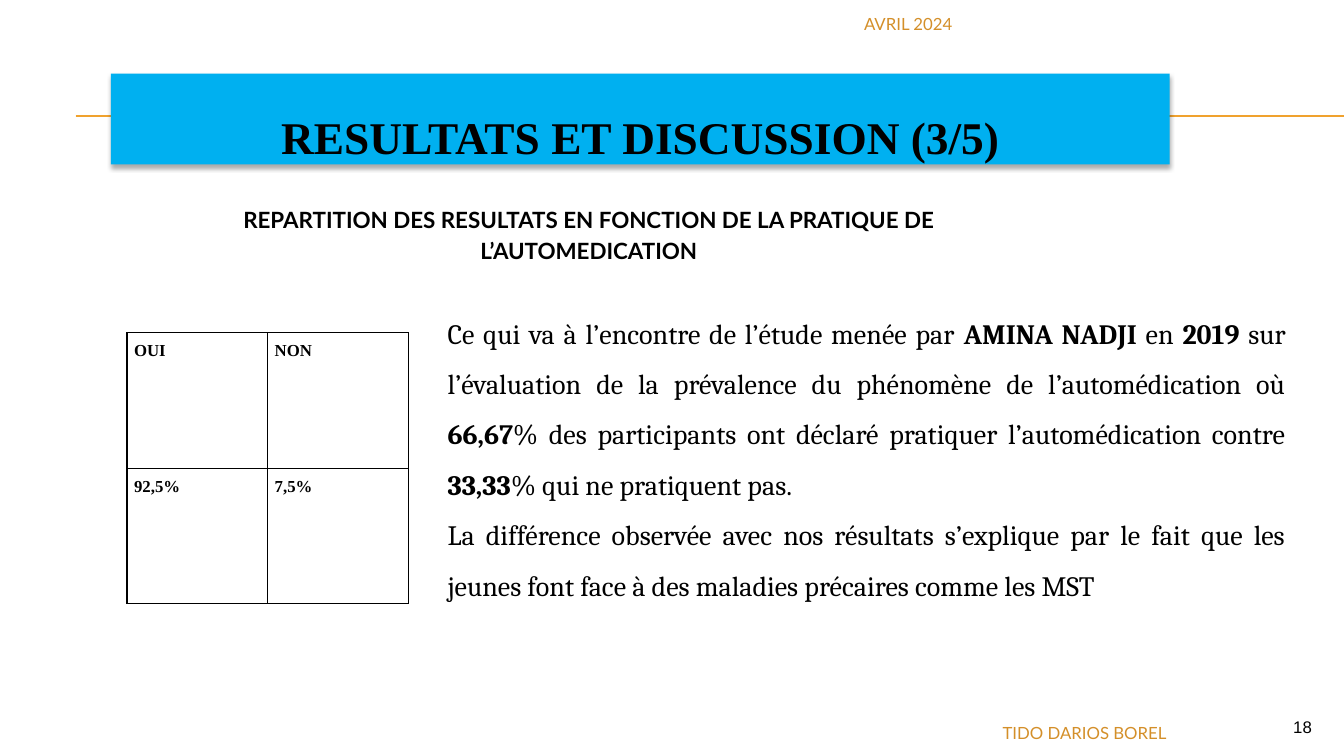
from dataclasses import dataclass

from lxml.etree import SubElement
from pptx import Presentation
from pptx.dml.color import RGBColor
from pptx.enum.shapes import MSO_CONNECTOR, MSO_SHAPE
from pptx.enum.text import MSO_ANCHOR, MSO_AUTO_SIZE, PP_ALIGN
from pptx.oxml import parse_xml
from pptx.oxml.ns import nsdecls, qn
from pptx.util import Inches, Pt


@dataclass(frozen=True)
class Theme:
    black: str = "000000"
    white: str = "FFFFFF"
    banner: str = "00B0F0"
    rule: str = "F0A22E"
    footer: str = "D48F29"
    serif: str = "Times New Roman"
    body: str = "Cambria"
    sans: str = "Lato"
    number: str = "Arial"
    title_pt: float = 32.4
    body_pt: float = 20
    heading_pt: float = 16
    small_pt: float = 12


@dataclass(frozen=True)
class Label:
    text: str
    box: tuple
    font: str
    color: str
    align: PP_ALIGN
    anchor: MSO_ANCHOR
    left_inset: float = 0.1


T = Theme()

LABELS = [
    Label("AVRIL 2024", (7.97, 0.08, 5.14, 0.32), T.sans, T.footer,
          PP_ALIGN.LEFT, MSO_ANCHOR.MIDDLE, 0.6),
    Label("TIDO DARIOS BOREL", (6.15, 7.12, 5.52, 0.19), T.sans, T.footer,
          PP_ALIGN.RIGHT, MSO_ANCHOR.TOP),
    Label("18", (12, 7.08, 1.11, 0.27), T.number, T.black,
          PP_ALIGN.RIGHT, MSO_ANCHOR.MIDDLE),
]

# Each paragraph is a list of (text, bold) runs
BODY = [
    [("Ce qui va à l’encontre de l’étude menée par ", False),
     ("AMINA NADJI", True), (" en ", False), ("2019 ", True),
     ("sur l’évaluation de la prévalence du phénomène de l’automédication où ", False),
     ("66,67", True),
     ("% des participants ont déclaré pratiquer l’automédication contre ", False),
     ("33,33", True), ("% qui ne pratiquent pas.", False)],
    [("La différence observée avec nos résultats s’explique par le fait que les "
      "jeunes font face à des maladies précaires comme les MST", False)],
]

ANSWERS = [["OUI", "NON"], ["92,5%", "7,5%"]]


def rgb(color: str) -> RGBColor:
    return RGBColor.from_string(color)


def inches(box: tuple) -> list:
    return [Inches(v) for v in box]


def write(tf, paragraphs: list, *, font: str, size: float, color: str = T.black,
          align: PP_ALIGN = PP_ALIGN.LEFT, spacing: float = 1.0,
          after: float = 0) -> None:
    """Fill a text frame with paragraphs of (text, bold) runs."""
    tf.word_wrap = True
    for i, runs in enumerate(paragraphs):
        p = tf.add_paragraph() if i else tf.paragraphs[0]
        p.alignment, p.line_spacing = align, spacing
        p.space_before, p.space_after = Pt(0), Pt(after)
        for text, bold in runs:
            r = p.add_run()
            r.text = text
            r.font.name, r.font.size, r.font.bold = font, Pt(size), bold
            r.font.color.rgb = rgb(color)


def add_title(s) -> None:
    title = s.shapes.title
    title.left, title.top, title.width, title.height = inches((1.1, 0.73, 10.5, 0.9))
    title.fill.solid()
    title.fill.fore_color.rgb = rgb(T.banner)
    title.line.fill.background()
    title.element.spPr.append(parse_xml(
        f'<a:effectLst {nsdecls("a")}><a:outerShdw blurRad="{Pt(3.5)}" '
        f'dist="{Pt(2.2)}" dir="5400000" rotWithShape="0">'
        f'<a:srgbClr val="{T.black}"><a:alpha val="32000"/></a:srgbClr>'
        '</a:outerShdw></a:effectLst>'))
    tf = title.text_frame
    tf.auto_size = MSO_AUTO_SIZE.NONE
    tf.vertical_anchor = MSO_ANCHOR.BOTTOM
    tf.margin_top = tf.margin_bottom = Inches(0.01)
    write(tf, [[("RESULTATS ET DISCUSSION (3/5)", True)]], font=T.serif,
          size=T.title_pt, align=PP_ALIGN.CENTER, spacing=1.5)


def add_rule(s, y: float) -> None:
    """Draw a horizontal rule behind the title banner."""
    line = s.shapes.add_connector(MSO_CONNECTOR.STRAIGHT,
                                  *inches((0.75, y, 13.33, y)))
    line.line.color.rgb = rgb(T.rule)
    line.line.width = Pt(0.75)
    SubElement(line.element.spPr, qn("a:effectLst"))
    s.shapes.title.element.addprevious(line.element)


def add_label(s, label: Label) -> None:
    tf = s.shapes.add_textbox(*inches(label.box)).text_frame
    tf.vertical_anchor = label.anchor
    tf.margin_left = Inches(label.left_inset)
    write(tf, [[(label.text, False)]], font=label.font, size=T.small_pt,
          color=label.color, align=label.align)


def add_heading(s) -> None:
    sp = s.shapes.add_shape(MSO_SHAPE.RECTANGLE, *inches((1.5, 1.96, 8.68, 0.47)))
    sp.shadow.inherit = False
    sp.fill.solid()
    sp.fill.fore_color.rgb = sp.line.color.rgb = rgb(T.white)
    sp.line.width = Pt(0.5)
    sp.text_frame.vertical_anchor = MSO_ANCHOR.TOP
    text = "REPARTITION DES RESULTATS EN FONCTION DE LA PRATIQUE DE L’AUTOMEDICATION"
    write(sp.text_frame, [[(text, True)]], font=T.sans, size=T.heading_pt,
          align=PP_ALIGN.CENTER, spacing=1.15, after=10)


def add_body(s) -> None:
    tf = s.shapes.add_textbox(*inches((4.34, 2.92, 8.51, 3.13))).text_frame
    write(tf, BODY, font=T.body, size=T.body_pt, align=PP_ALIGN.JUSTIFY, spacing=1.5)


def border_cell(cell) -> None:
    tc_pr = cell._tc.get_or_add_tcPr()
    for i, side in enumerate(("lnL", "lnR", "lnT", "lnB")):
        tc_pr.insert(i, parse_xml(
            f'<a:{side} {nsdecls("a")} w="{Pt(1)}"><a:solidFill>'
            f'<a:srgbClr val="{T.black}"/></a:solidFill></a:{side}>'))


def add_answers(s) -> None:
    table = s.shapes.add_table(2, 2, *inches((1.26, 3.3, 2.79, 2.69))).table
    table.first_row = table.horz_banding = False
    for row, texts in zip(table.rows, ANSWERS):
        for cell, text in zip(row.cells, texts):
            cell.fill.background()
            cell.margin_left = cell.margin_right = Inches(0.07)
            cell.margin_top = cell.margin_bottom = 0
            write(cell.text_frame, [[(text, True)]], font=T.serif,
                  size=T.small_pt, spacing=1.5)
            border_cell(cell)


def main() -> None:
    prs = Presentation()
    prs.slide_width, prs.slide_height = Inches(13.33), Inches(7.5)
    s = prs.slides.add_slide(prs.slide_layouts[5])

    # Banner and rules
    add_title(s)
    for y in (1.15, 1.16):
        add_rule(s, y)

    # Date, author and slide number
    for label in LABELS:
        add_label(s, label)

    # Content
    add_heading(s)
    add_body(s)
    add_answers(s)

    prs.save("out.pptx")


if __name__ == "__main__":
    main()
